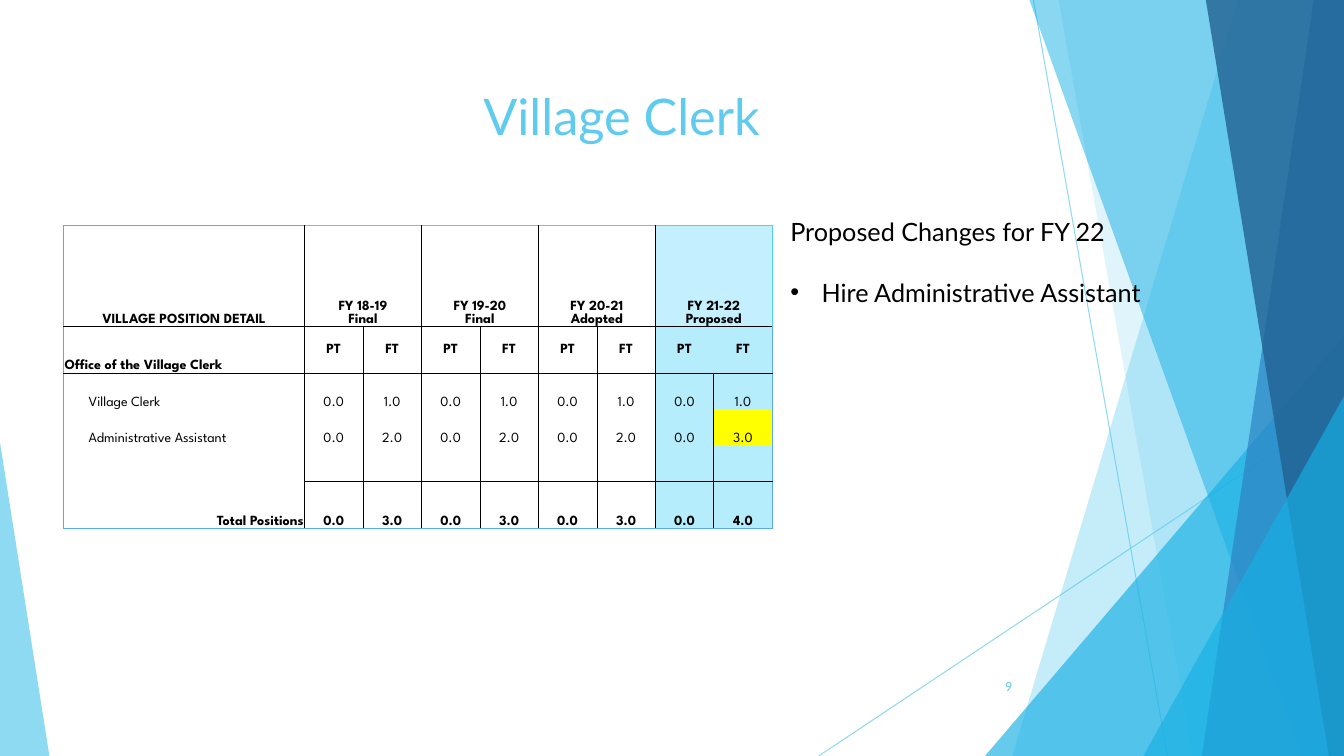
"""Build the Village Clerk staffing slide."""
import copy
import dataclasses
import typing

import pptx
import pptx.dml.color
import pptx.enum.shapes
import pptx.enum.text
import pptx.oxml
import pptx.oxml.ns
import pptx.util

Inches = pptx.util.Inches
Pt = pptx.util.Pt
Align = pptx.enum.text.PP_ALIGN
Anchor = pptx.enum.text.MSO_ANCHOR
qn = pptx.oxml.ns.qn

COLOURS = {
    "sky": "5FCBEF", "cyan": "17B0E4", "blue": "2E83C3", "navy": "226292",
    "black": "000000", "edge": "59AAF2", "top edge": "4FCEFF",
    "header": "C4EFFF", "proposed": "B5EDFD", "changed": "FFFF00",
}
NO_STYLE = "{2D5ABB26-0587-4C30-8999-92F81FD0307C}"
WIDTH, HEIGHT = 13.33, 7.5


@dataclasses.dataclass
class Pane:
    points: list[tuple[float, float]]
    colour: str
    alpha: int


@dataclasses.dataclass
class Wedge:
    area: tuple[float, float, float, float]
    apex: float
    colour: str
    alpha: int


@dataclasses.dataclass
class Label:
    area: tuple[float, float, float, float]
    lines: list[str]
    size: int
    colour: str
    frame: dict[str, typing.Any]
    align: typing.Any = Align.LEFT


def to_edge(top: float, bottom: float) -> list[tuple[float, float]]:
    return [(top, 0), (WIDTH, 0), (WIDTH, HEIGHT), (bottom, HEIGHT)]


RAYS = [((10.25, 0), (11.58, HEIGHT)), ((WIDTH, 4.03), (8.12, HEIGHT))]
FACETS = [
    Pane(to_edge(12.28, 10.04), "sky", 36),
    Pane(to_edge(10.5, 11.83), "sky", 20),
    Wedge((9.77, 3.33, 3.56, 4.17), 1, "cyan", 66),
    Pane(to_edge(10.21, 12.91), "cyan", 50),
    Pane(to_edge(13.03, 11.92), "blue", 70),
    Pane(to_edge(11.96, 13.18), "navy", 80),
    Wedge((11.34, 3.93, 1.99, 3.57), 1, "cyan", 66),
    Wedge((0, 4.39, 0.49, 3.11), 0, "sky", 70),
]
LABELS = [
    Label((1.2, 0.8, 9.93, 0.87), ["Village Clerk"], 36, "sky", {"word_wrap": True}, Align.CENTER),
    Label((9.39, 6.61, 0.75, 0.4), ["9"], 9, "sky",
          {"word_wrap": True, "vertical_anchor": Anchor.MIDDLE}, Align.RIGHT),
    Label((7.74, 2.1, 3.76, 1.31), ["Proposed Changes for FY 22", "Hire Administrative Assistant"],
          18, "black",
          {"word_wrap": False, "auto_size": pptx.enum.text.MSO_AUTO_SIZE.SHAPE_TO_FIT_TEXT}),
]
YEARS = ["FY 18-19\nFinal", "FY 19-20\nFinal", "FY 20-21\nAdopted", "FY 21-22\nProposed"]
ROWS = [
    ["VILLAGE POSITION DETAIL", ""] + [text for year in YEARS for text in (year, "")],
    ["Office of the Village Clerk", ""] + ["PT", "FT"] * 4,
    ["", "Village Clerk"] + ["0.0", "1.0"] * 4,
    ["", "Administrative Assistant"] + ["0.0", "2.0"] * 3 + ["0.0", "3.0"],
    [""] * 10,
    ["", "Total Positions"] + ["0.0", "3.0"] * 3 + ["0.0", "4.0"],
]
COLUMN_WIDTHS = [0.24, 2.15] + [0.58] * 8
ROW_HEIGHTS = [1, 0.46, 0.36, 0.36, 0.36, 0.46]
LAST_ROW, LAST_COLUMN = len(ROWS) - 1, len(COLUMN_WIDTHS) - 1


def rgb(name: str) -> pptx.dml.color.RGBColor:
    return pptx.dml.color.RGBColor.from_string(COLOURS[name])


def set_all(target: typing.Any, values: dict[str, typing.Any]) -> None:
    for name, value in values.items():
        setattr(target, name, value)


def set_alpha(element: typing.Any, percent: int) -> None:
    colour = next(element.iter(qn("a:srgbClr")))
    colour.append(colour.makeelement(qn("a:alpha"), {"val": str(percent * 1000)}))


def draw_ray(page: typing.Any, start: tuple[float, float], end: tuple[float, float]) -> None:
    ray = page.shapes.add_connector(pptx.enum.shapes.MSO_CONNECTOR.STRAIGHT,
                                    *map(Inches, start + end))
    ray.line.color.rgb = rgb("sky")
    ray.line.width = Pt(0.75)
    properties = ray._element.spPr
    set_alpha(properties, 70)
    properties.append(properties.makeelement(qn("a:effectLst"), {}))


def draw_facet(page: typing.Any, facet: Pane | Wedge) -> None:
    if isinstance(facet, Pane):
        points = [(Inches(x), Inches(y)) for x, y in facet.points]
        builder = page.shapes.build_freeform(*points[0])
        builder.add_line_segments(points[1:], close=True)
        shape = builder.convert_to_shape()
    else:
        shape = page.shapes.add_shape(pptx.enum.shapes.MSO_SHAPE.ISOSCELES_TRIANGLE,
                                      *map(Inches, facet.area))
        shape.adjustments[0] = facet.apex
    shape.shadow.inherit = False
    shape.line.fill.background()
    shape.fill.solid()
    shape.fill.fore_color.rgb = rgb(facet.colour)
    set_alpha(shape._element.spPr, facet.alpha)


def write(para: typing.Any, text: str, font: dict[str, typing.Any], colour: str) -> None:
    for index, line in enumerate(text.split("\n")):
        if index:
            para.add_line_break()
        span = para.add_run()
        span.text = line
        set_all(span.font, font)
        span.font.color.rgb = rgb(colour)
    for line_break in para._p.findall(qn("a:br")):
        line_break.append(copy.deepcopy(span._r.rPr))


def draw_label(page: typing.Any, label: Label) -> None:
    box = page.shapes.add_textbox(*map(Inches, label.area))
    set_all(box.text_frame, label.frame)
    for index, line in enumerate(label.lines):
        para = box.text_frame.add_paragraph() if index else box.text_frame.paragraphs[0]
        para.alignment = label.align
        write(para, line, {"name": "Lato", "size": Pt(label.size)}, label.colour)
        if index:
            para.space_before = Pt(21.6)
            properties = para._p.get_or_add_pPr()
            properties.set("marL", str(Inches(0.31)))
            properties.set("indent", str(-Inches(0.31)))
            for tag, values in (("a:buFont", {"typeface": "Arial"}), ("a:buChar", {"char": "•"})):
                properties.append(properties.makeelement(qn(tag), values))


def cell_borders(row: int, column: int, last: int) -> dict[str, str]:
    figures = column >= 2
    rules = [
        ("lnL", column == 0, "edge"),
        ("lnL", figures and column % 2 == 0, "black"),
        ("lnR", last == LAST_COLUMN, "edge" if row else "top edge"),
        ("lnR", last % 2 == 1 and last < LAST_COLUMN, "black"),
        ("lnT", row == 0, "top edge" if figures else "edge"),
        ("lnT", row == 1 or (row == LAST_ROW and figures), "black"),
        ("lnB", row == 0 or (row == LAST_ROW - 1 and figures), "black"),
        ("lnB", row == LAST_ROW, "edge"),
    ]
    return {side: colour for side, applies, colour in rules if applies}


def fill_name(row: int, column: int) -> str | None:
    if column < LAST_COLUMN - 1:
        return None
    if (row, column) == (3, LAST_COLUMN):
        return "changed"
    return "proposed" if row else "header"


def draw_cell(cell: typing.Any, row: int, column: int) -> None:
    last = column + 1 if cell.is_merge_origin else column
    set_all(cell, {"margin_left": Inches(0.01), "margin_right": Inches(0.01),
                   "margin_top": Inches(0.01), "margin_bottom": 0,
                   "vertical_anchor": Anchor.MIDDLE if row == 1 and column >= 2 else Anchor.BOTTOM})
    properties = cell._tc.get_or_add_tcPr()
    for side, colour in cell_borders(row, column, last).items():
        properties.append(pptx.oxml.parse_xml(
            f'<a:{side} {pptx.oxml.ns.nsdecls("a")} w="{Pt(0.5)}"><a:solidFill>'
            f'<a:srgbClr val="{COLOURS[colour]}"/></a:solidFill></a:{side}>'))
    fill = fill_name(row, column)
    if fill:
        cell.fill.solid()
        cell.fill.fore_color.rgb = rgb(fill)
    else:
        cell.fill.background()
    text = ROWS[row][column]
    if text:
        para = cell.text_frame.paragraphs[0]
        label_align = {0: Align.CENTER, LAST_ROW: Align.RIGHT}.get(row, Align.LEFT)
        para.alignment = Align.CENTER if column >= 2 else label_align
        bold = row in (0, 1, LAST_ROW)
        write(para, text, {"name": "League Spartan", "size": Pt(10), "bold": bold}, "black")


def draw_positions(page: typing.Any) -> None:
    frame = page.shapes.add_table(len(ROWS), len(COLUMN_WIDTHS), *map(Inches, (0.63, 2.24, 7.04, 3)))
    table = frame.table
    set_all(table, {"first_row": False, "horz_banding": False})
    next(table._tbl.iter(qn("a:tableStyleId"))).text = NO_STYLE
    for column, width in zip(table.columns, COLUMN_WIDTHS):
        column.width = Inches(width)
    for row, height in zip(table.rows, ROW_HEIGHTS):
        row.height = Inches(height)
    for row, column in [(0, start) for start in range(0, 10, 2)] + [(1, 0)]:
        table.cell(row, column).merge(table.cell(row, column + 1))
    for row in range(len(ROWS)):
        for column in range(len(COLUMN_WIDTHS)):
            draw_cell(table.cell(row, column), row, column)


def main() -> None:
    deck = pptx.Presentation()
    set_all(deck, {"slide_width": Inches(WIDTH), "slide_height": Inches(HEIGHT)})
    page = deck.slides.add_slide(deck.slide_layouts[6])
    for start, end in RAYS:
        draw_ray(page, start, end)
    for facet in FACETS:
        draw_facet(page, facet)
    for label in LABELS:
        draw_label(page, label)
    draw_positions(page)
    deck.save("out.pptx")


if __name__ == "__main__":
    main()
